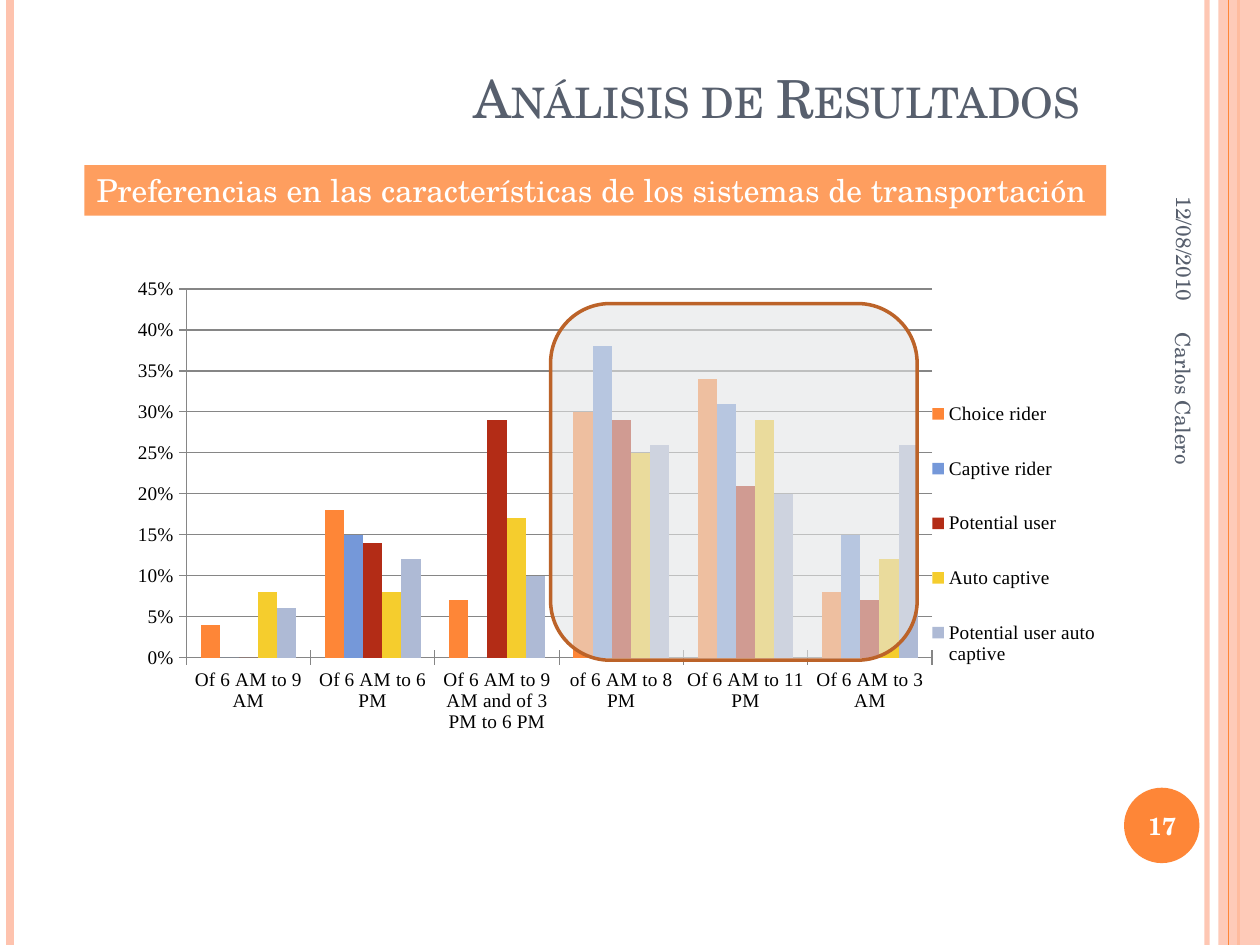
from dataclasses import dataclass

from lxml.etree import SubElement
from pptx import Presentation
from pptx.chart.data import CategoryChartData
from pptx.dml.color import RGBColor
from pptx.enum.chart import XL_CHART_TYPE, XL_LEGEND_POSITION, XL_TICK_MARK
from pptx.enum.shapes import MSO_CONNECTOR, MSO_SHAPE
from pptx.enum.text import MSO_ANCHOR, PP_ALIGN
from pptx.oxml import parse_xml
from pptx.oxml.ns import nsdecls, qn
from pptx.util import Cm, Pt


@dataclass(frozen=True)
class Theme:
    font: str = "TeX Gyre Schola"
    chart_font: str = "Times New Roman"
    ink: str = "575F6D"
    white: str = "FFFFFF"
    black: str = "000000"
    orange: str = "FE8637"
    peach: str = "FEC3AE"
    veil: str = "E4E5E6"
    veil_edge: str = "BC6329"
    grid: str = "868686"
    series: tuple = ("FE8637", "7598D9", "B32C16", "F5CD2D", "AEBAD5")
    title_size: int = 30
    banner_size: int = 18
    number_size: int = 14
    footer_size: int = 12
    chart_size: int = 11


THEME = Theme()
WIDTH, HEIGHT = 25.4, 19.05

PERIODS = ("Of 6 AM to 9 AM", "Of 6 AM to 6 PM",
           "Of 6 AM to 9 AM and of 3 PM to 6 PM",
           "of 6 AM to 8 PM", "Of 6 AM to 11 PM", "Of 6 AM to 3 AM")
RIDERS = {
    "Choice rider": (0.04, 0.18, 0.07, 0.3, 0.34, 0.08),
    "Captive rider": (0, 0.15, 0, 0.38, 0.31, 0.15),
    "Potential user": (0, 0.14, 0.29, 0.29, 0.21, 0.07),
    "Auto captive": (0.08, 0.08, 0.17, 0.25, 0.29, 0.12),
    "Potential user auto captive": (0.06, 0.12, 0.1, 0.26, 0.2, 0.26),
}


def rgb(value):
    return RGBColor.from_string(value)


def set_alpha(fill_or_line_element, percent):
    """Make the first solid colour below the element partly transparent."""
    color = next(fill_or_line_element.iter(qn("a:srgbClr")))
    SubElement(color, qn("a:alpha")).set("val", str(percent * 1000))


def write(frame, text, size, color, align=PP_ALIGN.LEFT, anchor=MSO_ANCHOR.MIDDLE,
          bold=False, small_caps=False):
    frame.word_wrap = True
    frame.vertical_anchor = anchor
    paragraph = frame.paragraphs[0]
    paragraph.alignment = align
    run = paragraph.add_run()
    run.text = text
    run.font.name = THEME.font
    run.font.size = Pt(size)
    run.font.bold = bold
    run.font.color.rgb = rgb(color)
    if small_caps:
        run.font._element.set("cap", "small")


def manual_layout(x, y, w, h, inner=False):
    target = '<c:layoutTarget val="inner"/>' if inner else ""
    sizes = "".join(f'<c:{key} val="{value}"/>'
                    for key, value in (("x", x), ("y", y), ("w", w), ("h", h)))
    return parse_xml(f'<c:layout {nsdecls("c")}><c:manualLayout>{target}'
                     f'<c:xMode val="edge"/><c:yMode val="edge"/>{sizes}'
                     '</c:manualLayout></c:layout>')


def place_layout(owner, layout, before):
    """Put the layout in front of the named child, replacing any earlier one."""
    for old in owner.findall(qn("c:layout")):
        owner.remove(old)
    owner.find(qn(before)).addprevious(layout)


class SlideBuilder:
    def __init__(self, slide, theme):
        self.slide = slide
        self.theme = theme

    def stripe(self, x, color, width, alpha=None):
        """Draw a vertical line over the full slide height."""
        line = self.slide.shapes.add_connector(
            MSO_CONNECTOR.STRAIGHT, Cm(x), Cm(0), Cm(x), Cm(HEIGHT))
        line.line.color.rgb = rgb(color)
        line.line.width = Pt(width)
        properties = line._element.spPr
        if alpha:
            set_alpha(properties, alpha)
        SubElement(properties, qn("a:effectLst"))

    def shape(self, kind, box, fill, alpha=None, edge=None, edge_width=2):
        shape = self.slide.shapes.add_shape(kind, *map(Cm, box))
        shape.shadow.inherit = False
        shape.fill.solid()
        shape.fill.fore_color.rgb = rgb(fill)
        if alpha:
            set_alpha(shape._element.spPr, alpha)
        if edge:
            shape.line.color.rgb = rgb(edge)
            shape.line.width = Pt(edge_width)
        else:
            shape.line.fill.background()
        return shape

    def text(self, box, text, size, color, rotation=0, **style):
        label = self.slide.shapes.add_textbox(*map(Cm, box))
        label.rotation = rotation
        write(label.text_frame, text, size, color, **style)

    def column_chart(self, box, categories, series):
        data = CategoryChartData(number_format="0%")
        data.categories = categories
        for name, values in series.items():
            data.add_series(name, values)
        chart = self.slide.shapes.add_chart(
            XL_CHART_TYPE.COLUMN_CLUSTERED, *map(Cm, box), data).chart
        chart.has_title = False
        chart.font.name = self.theme.chart_font
        chart.font.size = Pt(self.theme.chart_size)
        chart.font.color.rgb = rgb(self.theme.black)

        plot = chart.plots[0]
        plot.vary_by_categories = False
        plot.gap_width = 150
        plot.overlap = 0
        for columns, color in zip(plot.series, self.theme.series):
            columns.format.fill.solid()
            columns.format.fill.fore_color.rgb = rgb(color)

        shares = chart.value_axis
        shares.minimum_scale, shares.maximum_scale, shares.major_unit = 0, 0.45, 0.05
        shares.tick_labels.number_format = "0%"
        shares.tick_labels.number_format_is_linked = False
        shares.has_major_gridlines = True
        for axis in (shares, chart.category_axis):
            axis.major_tick_mark = XL_TICK_MARK.CROSS
        for rule in (shares, chart.category_axis, shares.major_gridlines):
            rule.format.line.color.rgb = rgb(self.theme.grid)
            rule.format.line.width = Pt(0.75)

        chart.has_legend = True
        chart.legend.position = XL_LEGEND_POSITION.RIGHT
        chart.legend.include_in_layout = False
        place_layout(chart.legend._element, manual_layout(0.81, 0.2, 0.18, 0.57),
                     "c:overlay")
        place_layout(chart._chartSpace.chart.plotArea,
                     manual_layout(0.09, 0.06, 0.73, 0.64, inner=True), "c:barChart")


def main():
    deck = Presentation()
    deck.slide_width, deck.slide_height = Cm(WIDTH), Cm(HEIGHT)
    page = SlideBuilder(deck.slides.add_slide(deck.slide_layouts[6]), THEME)

    page.stripe(24.33, THEME.peach, 3, alpha=93)
    page.stripe(0.2, THEME.peach, 4.5)
    page.stripe(24.97, THEME.orange, 1.5)
    page.shape(MSO_SHAPE.RECTANGLE, (24.56, 0, 0.84, HEIGHT), THEME.peach, alpha=87)
    page.stripe(24.76, THEME.orange, 0.75)
    page.shape(MSO_SHAPE.OVAL, (22.66, 15.88, 1.52, 1.52), THEME.orange)

    page.text((1.27, 0.76, 20.75, 1.96), "Análisis de Resultados", THEME.title_size,
              THEME.ink, align=PP_ALIGN.RIGHT, anchor=MSO_ANCHOR.BOTTOM, small_caps=True)
    page.text((21.08, 3, 5.59, 1.07), "12/08/2010", THEME.footer_size, THEME.ink,
              rotation=90, align=PP_ALIGN.RIGHT)
    page.text((22.58, 15.93, 1.7, 1.45), "17", THEME.number_size, THEME.white,
              align=PP_ALIGN.CENTER, bold=True)
    page.text((19.41, 10.39, 8.89, 1.02), "Carlos Calero", THEME.footer_size,
              THEME.ink, rotation=90)

    page.column_chart((1.9, 5.13, 20.6, 11.61), PERIODS, RIDERS)
    banner = page.shape(MSO_SHAPE.RECTANGLE, (1.7, 3.33, 20.6, 1.02),
                        THEME.orange, alpha=80)
    write(banner.text_frame,
          "Preferencias en las características de los sistemas de transportación",
          THEME.banner_size, THEME.white, anchor=MSO_ANCHOR.TOP)
    page.shape(MSO_SHAPE.ROUNDED_RECTANGLE, (11.1, 6.12, 7.39, 7.19), THEME.veil,
               alpha=60, edge=THEME.veil_edge)

    deck.save("out.pptx")


if __name__ == "__main__":
    main()
